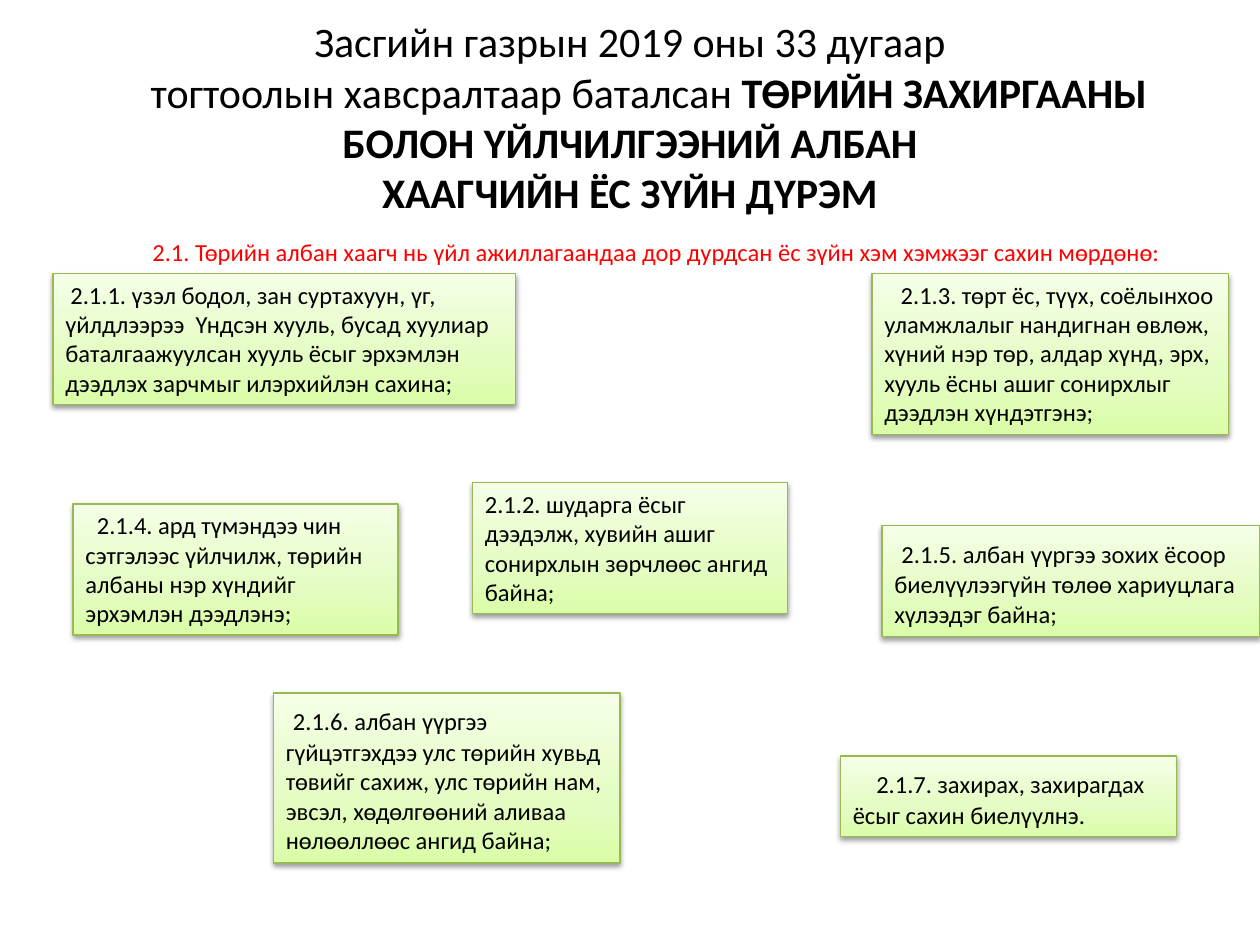
from copy import deepcopy

from lxml import etree
from pptx import Presentation
from pptx.dml.color import RGBColor
from pptx.enum.shapes import MSO_SHAPE
from pptx.enum.text import MSO_ANCHOR, MSO_AUTO_SIZE, PP_ALIGN
from pptx.oxml.ns import qn
from pptx.util import Inches, Pt

RECTANGLE = MSO_SHAPE.RECTANGLE
TOP, MIDDLE = MSO_ANCHOR.TOP, MSO_ANCHOR.MIDDLE
LEFT, CENTER = PP_ALIGN.LEFT, PP_ALIGN.CENTER
GROW = MSO_AUTO_SIZE.SHAPE_TO_FIT_TEXT

COLORS = {
    "text": "000000",
    "rule": "FF0000",
    "border": "98B955",
    "shadow": "000000",
    "bottom": "DAFDA7",
    "middle": "E4FCC2",
    "top": "F5FFE7",
}
GRADIENT = [(0, "bottom"), (0.35, "middle"), (1, "top")]
SHADOW = {"blurRad": Pt(3.1), "dist": Pt(1.6), "dir": 90 * 60000, "rotWithShape": 0}


def write(paragraph, runs, align=LEFT, indent=0, color="text"):
    """Fill a paragraph with (text, size, bold) runs; indent moves its first line."""
    paragraph.alignment = align
    if indent:
        properties = paragraph._p.get_or_add_pPr()
        properties.set("marL", "0")
        properties.set("indent", str(Inches(indent)))
    for text, size, bold in runs:
        run = paragraph.add_run()
        run.text = text
        formats = {"name": "Calibri", "size": Pt(size), "bold": bold}
        for attribute, value in formats.items():
            setattr(run.font, attribute, value)
        run.font.color.rgb = RGBColor.from_string(COLORS[color])


def style_card(card):
    """Give a card its green gradient, border and soft shadow."""
    card.fill.gradient()
    card.fill.gradient_angle = 90
    stops = card._element.spPr.find(qn("a:gradFill")).find(qn("a:gsLst"))
    stops.append(deepcopy(stops[-1]))
    for stop, (position, color) in zip(card.fill.gradient_stops, GRADIENT):
        stop.position = position
        stop.color.rgb = RGBColor.from_string(COLORS[color])
    card.line.color.rgb = RGBColor.from_string(COLORS["border"])
    card.line.width = Pt(0.75)
    card.shadow.inherit = False
    effects = card._element.spPr.find(qn("a:effectLst"))
    outer = etree.SubElement(effects, qn("a:outerShdw"))
    for attribute, value in SHADOW.items():
        outer.set(attribute, str(value))
    shade = etree.SubElement(outer, qn("a:srgbClr"), val=COLORS["shadow"])
    etree.SubElement(shade, qn("a:alpha"), val="38000")


presentation = Presentation()
presentation.slide_width, presentation.slide_height = Inches(10), Inches(7.5)
slide = presentation.slides.add_slide(presentation.slide_layouts[6])

# Title
title = slide.shapes.add_textbox(Inches(0.5), Inches(0.3), Inches(9), Inches(1.25)).text_frame
title.word_wrap = True
title.vertical_anchor = MIDDLE
write(title.paragraphs[0], [("Засгийн газрын 2019 оны 33 дугаар", 24, False)], CENTER)
write(
    title.add_paragraph(),
    [
        ("тогтоолын хавсралтаар баталсан ", 24, False),
        ("ТӨРИЙН ЗАХИРГААНЫ БОЛОН ҮЙЛЧИЛГЭЭНИЙ АЛБАН", 24, True),
    ],
    CENTER,
    indent=0.3,
)
write(title.add_paragraph(), [("ХААГЧИЙН ЁС ЗҮЙН ДҮРЭМ", 24, True)], CENTER)

# Opening rule
rule = slide.shapes.add_textbox(Inches(0.42), Inches(1.83), Inches(9.58), Inches(0.25)).text_frame
rule.word_wrap = True
write(
    rule.paragraphs[0],
    [("2.1. Төрийн албан хаагч нь үйл ажиллагаандаа дор дурдсан ёс зүйн хэм хэмжээг сахин мөрдөнө:", 14, False)],
    CENTER,
    color="rule",
)

# Clauses: left, top, width, height, first-line indent, size of leading space, text
CLAUSES = [
    (0.42, 2.17, 3.67, 1.04, 0.04, None,
     "2.1.1. үзэл бодол, зан суртахуун, үг, үйлдлээрээ  Үндсэн хууль, бусад хуулиар "
     "баталгаажуулсан хууль ёсыг эрхэмлэн дээдлэх зарчмыг илэрхийлэн сахина;"),
    (3.75, 3.83, 2.5, 1.04, 0, None,
     "2.1.2. шударга ёсыг дээдэлж, хувийн ашиг сонирхлын зөрчлөөс ангид байна;"),
    (6.92, 2.17, 2.83, 1.28, 0.13, None,
     "2.1.3. төрт ёс, түүх, соёлынхоо уламжлалыг нандигнан өвлөж, хүний нэр төр, "
     "алдар хүнд, эрх, хууль ёсны ашиг сонирхлыг дээдлэн хүндэтгэнэ;"),
    (0.58, 4, 2.58, 1.04, 0.09, None,
     "2.1.4. ард түмэндээ чин сэтгэлээс үйлчилж, төрийн албаны нэр хүндийг "
     "эрхэмлэн дээдлэнэ;"),
    (7, 4.17, 3, 0.88, 0, 18,
     "2.1.5. албан үүргээ зохих ёсоор биелүүлээгүйн төлөө хариуцлага хүлээдэг байна;"),
    (2.17, 5.5, 2.75, 1.35, 0, 18,
     "2.1.6. албан үүргээ гүйцэтгэхдээ улс төрийн хувьд төвийг сахиж, улс төрийн нам, "
     "эвсэл, хөдөлгөөний аливаа нөлөөллөөс ангид байна;"),
    (6.67, 6, 2.67, 0.64, 0.13, 18,
     "2.1.7. захирах, захирагдах ёсыг сахин биелүүлнэ."),
]
for left, top, width, height, indent, space_size, clause in CLAUSES:
    card = slide.shapes.add_shape(
        RECTANGLE, Inches(left), Inches(top), Inches(width), Inches(height)
    )
    style_card(card)
    frame = card.text_frame
    frame.word_wrap = True
    frame.auto_size = GROW
    frame.vertical_anchor = TOP
    leading = [(" ", space_size, False)] if space_size else []
    write(frame.paragraphs[0], leading + [(clause, 14, False)], indent=indent)

presentation.save("out.pptx")
